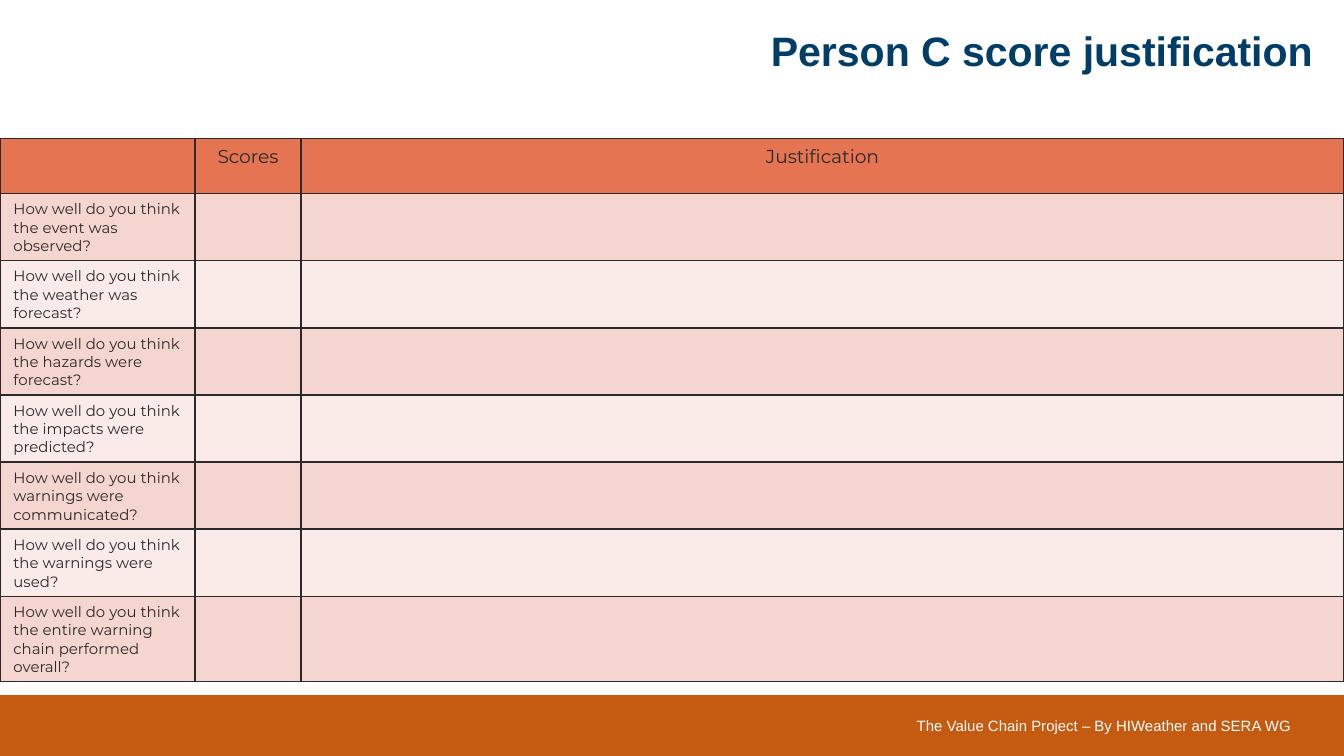
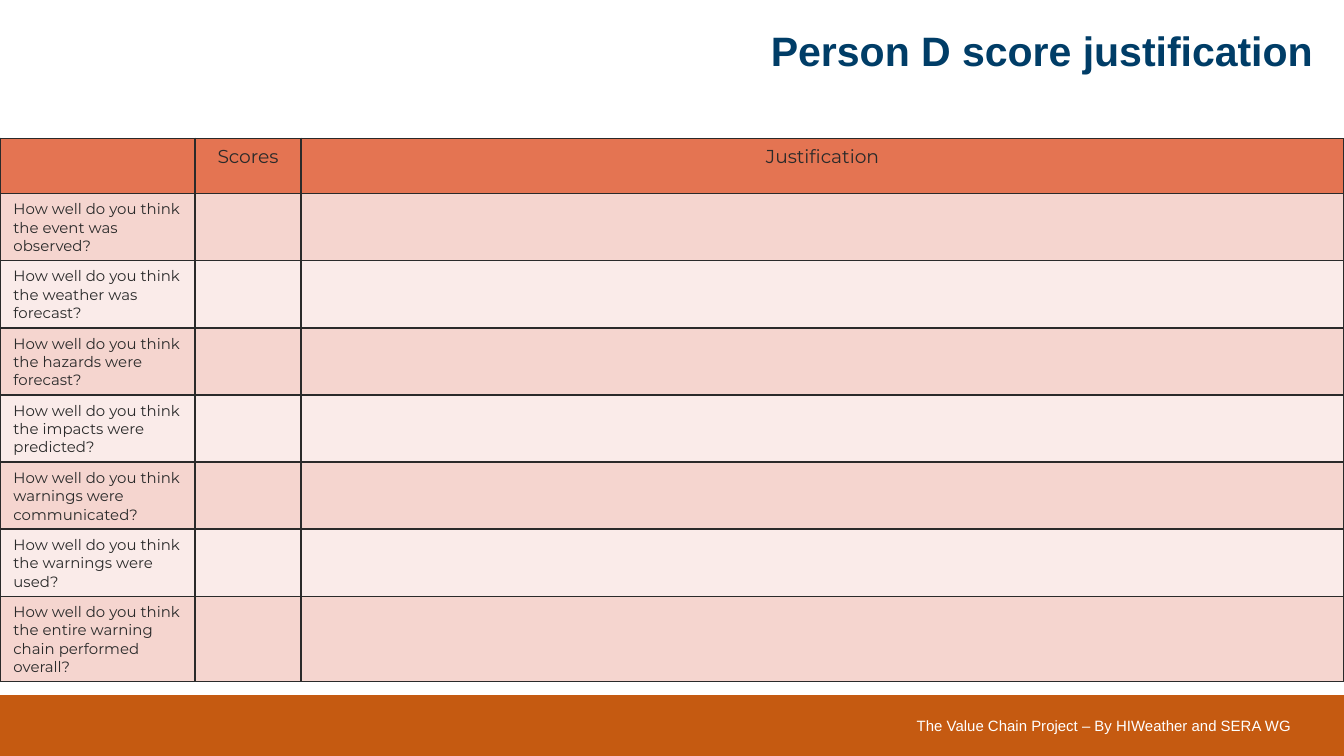
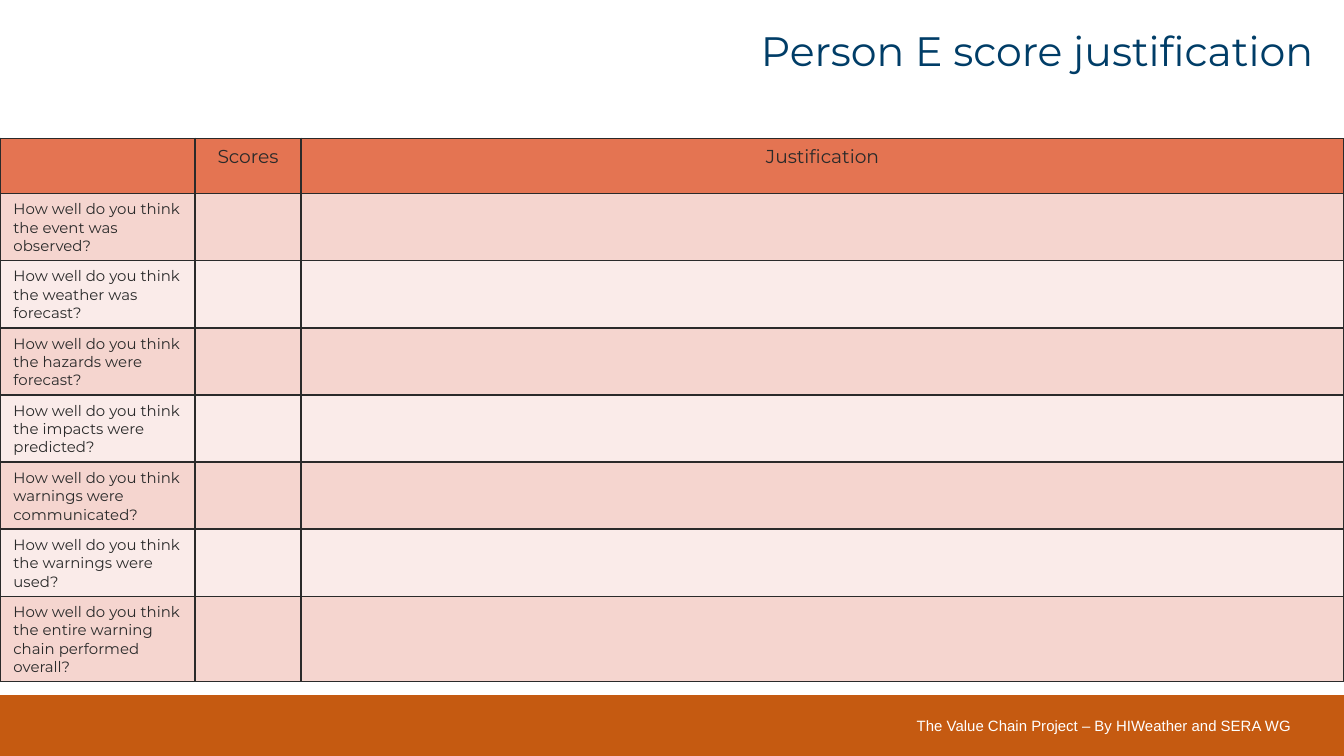
from lxml import etree
from pptx import Presentation
from pptx.dml.color import RGBColor
from pptx.enum.shapes import MSO_SHAPE
from pptx.enum.text import MSO_ANCHOR, MSO_AUTO_SIZE, PP_ALIGN
from pptx.oxml.ns import qn
from pptx.util import Inches, Pt

RECTANGLE = MSO_SHAPE.RECTANGLE
TOP, MIDDLE = MSO_ANCHOR.TOP, MSO_ANCHOR.MIDDLE
LEFT, CENTER, RIGHT = PP_ALIGN.LEFT, PP_ALIGN.CENTER, PP_ALIGN.RIGHT
GROW = MSO_AUTO_SIZE.SHAPE_TO_FIT_TEXT

WIDTH = 10
HEIGHT = WIDTH * 9 / 16
BAND_TOP, FOOTER_TOP, BAND_HEIGHT = 5.18, 5.17, 0.45
TABLE_TOP, ROW_HEIGHT = 1.03, 0.41
COLUMN_WIDTHS = (1.45, 0.79, 7.76)

NAVY, INK, WHITE = "003D67", "2A2A2A", "FFFFFF"
BAND_COLOR, HEADER_FILL = "C55A11", "E47452"
ROW_FILLS = ("F5D5CF", "FAEBE9")
SANS, DISPLAY = "Arial", "Montserrat"

FOOTER = "The Value Chain Project – By HIWeather and SERA WG"
HEADINGS = ("", "Scores", "Justification")
TOPICS = (
    "the event was observed",
    "the weather was forecast",
    "the hazards were forecast",
    "the impacts were predicted",
    "warnings were communicated",
    "the warnings were used",
    "the entire warning chain performed overall",
)
PEOPLE = (("C", SANS, True), ("D", SANS, True), ("E", DISPLAY, False))


def rgb(code):
    """Turn a hex string into a colour."""
    return RGBColor.from_string(code)


def write(frame, text, size, font, color, align=LEFT, bold=False):
    """Put one formatted paragraph into a text frame."""
    para = frame.paragraphs[0]
    para.text = text
    para.alignment = align
    para.font.size = Pt(size)
    para.font.name = font
    para.font.bold = bold
    para.font.color.rgb = rgb(color)


def add_title(page, text, font, bold):
    """Move and format the title placeholder."""
    title = page.shapes.title
    title.left, title.top = Inches(3.21), Inches(0.14)
    title.width, title.height = Inches(6.66), Inches(0.47)
    frame = title.text_frame
    frame.word_wrap = True
    frame.auto_size = GROW
    frame.vertical_anchor = TOP
    write(frame, text, 22, font, NAVY, RIGHT, bold)


def add_footer(page):
    """Draw the band along the bottom and its text."""
    size = (Inches(WIDTH), Inches(BAND_HEIGHT))
    band = page.shapes.add_shape(RECTANGLE, 0, Inches(BAND_TOP), *size)
    band.shadow.inherit = False
    band.fill.solid()
    band.fill.fore_color.rgb = rgb(BAND_COLOR)
    band.line.color.rgb = rgb(BAND_COLOR)
    band.line.width = Pt(1)
    box = page.shapes.add_textbox(0, Inches(FOOTER_TOP), *size)
    frame = box.text_frame
    frame.word_wrap = True
    frame.vertical_anchor = MIDDLE
    frame.margin_left = frame.margin_right = Inches(0.39)
    write(frame, FOOTER, 8, SANS, WHITE, RIGHT)


def add_borders(cell):
    """Give a cell a thin dark line on all four sides."""
    properties = cell._tc.get_or_add_tcPr()
    for side in ("lnL", "lnR", "lnT", "lnB"):
        line = etree.SubElement(properties, qn(f"a:{side}"), w=str(Pt(1)))
        fill = etree.SubElement(line, qn("a:solidFill"))
        etree.SubElement(fill, qn("a:srgbClr"), val=INK)


def fill_cell(cell, text, fill, size, align):
    """Write, outline and colour one table cell."""
    write(cell.text_frame, text, size, DISPLAY, INK, align)
    add_borders(cell)
    cell.fill.solid()
    cell.fill.fore_color.rgb = rgb(fill)


def add_score_table(page):
    """Add the questions with empty score and justification columns."""
    count = len(TOPICS) + 1
    table = page.shapes.add_table(
        count, len(HEADINGS), 0, Inches(TABLE_TOP), Inches(WIDTH), Inches(ROW_HEIGHT * count)
    ).table
    table.first_row = table.horz_banding = False
    for column, width in zip(table.columns, COLUMN_WIDTHS):
        column.width = Inches(width)
    for row in table.rows:
        row.height = Inches(ROW_HEIGHT)
    for index, heading in enumerate(HEADINGS):
        fill_cell(table.cell(0, index), heading, HEADER_FILL, 10, CENTER)
    for number, topic in enumerate(TOPICS):
        texts = (f"How well do you think {topic}?", "", "")
        for index, text in enumerate(texts):
            fill_cell(table.cell(number + 1, index), text, ROW_FILLS[number % 2], 8, LEFT)


def main():
    """Build one score justification slide per person."""
    deck = Presentation()
    deck.slide_width, deck.slide_height = Inches(WIDTH), Inches(HEIGHT)
    title_only = deck.slide_layouts[5]
    for person, font, bold in PEOPLE:
        page = deck.slides.add_slide(title_only)
        add_footer(page)
        add_score_table(page)
        add_title(page, f"Person {person} score justification", font, bold)
    deck.save("out.pptx")


if __name__ == "__main__":
    main()
